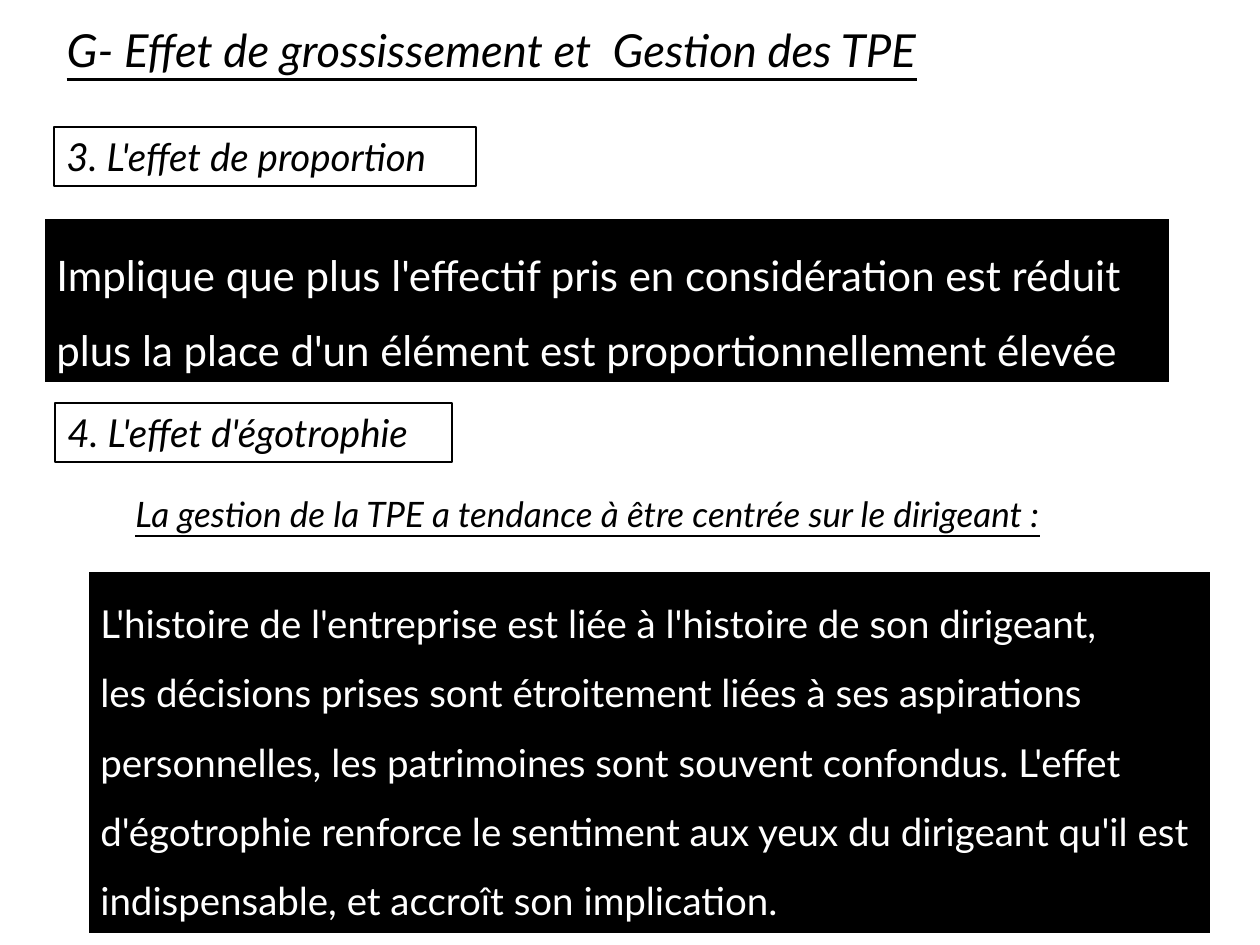
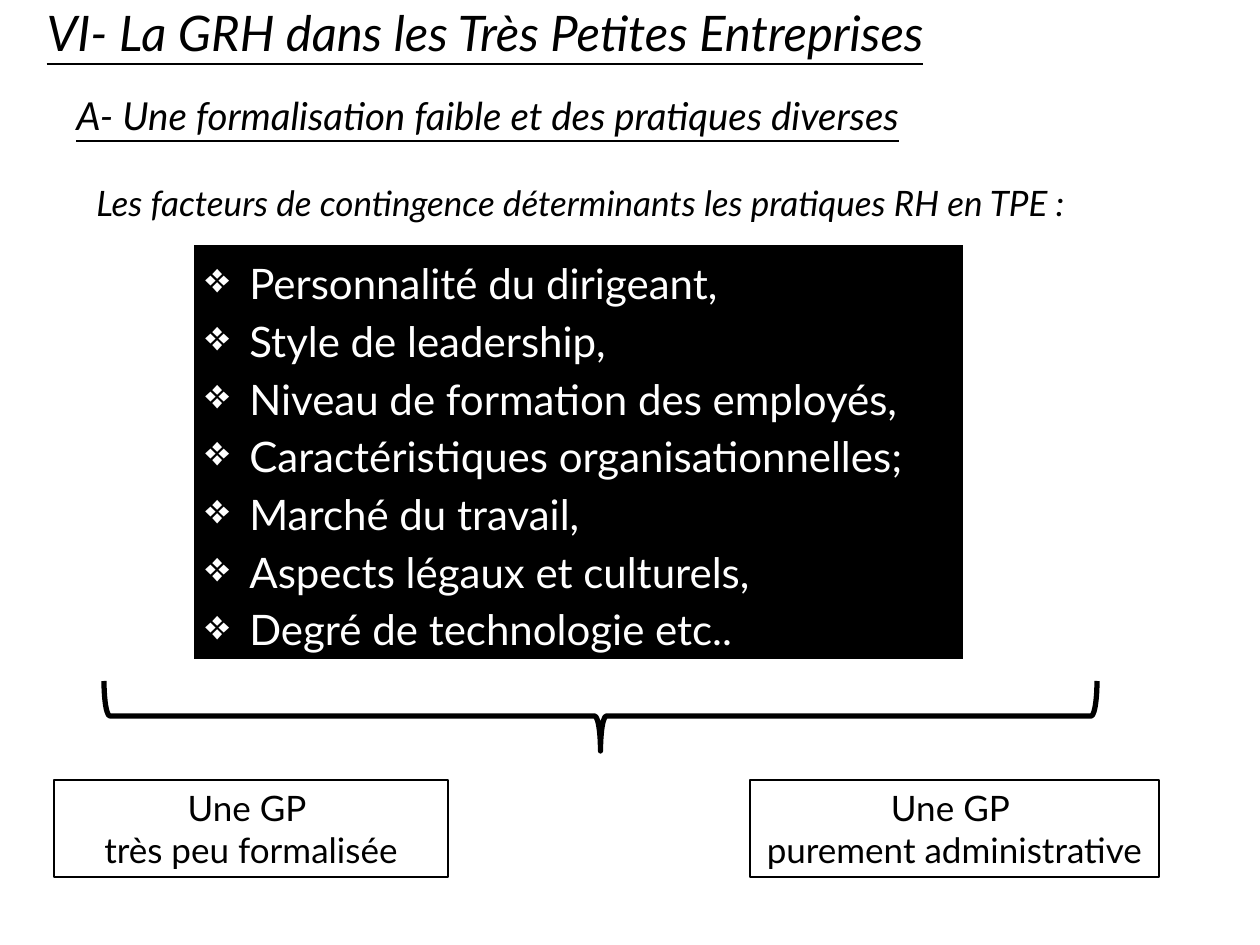
from dataclasses import dataclass

from lxml import etree
from pptx import Presentation
from pptx.dml.color import RGBColor
from pptx.enum.shapes import MSO_SHAPE
from pptx.enum.text import MSO_ANCHOR, MSO_AUTO_SIZE, PP_ALIGN
from pptx.oxml.ns import qn
from pptx.util import Pt

RECTANGLE = MSO_SHAPE.RECTANGLE
RIGHT_BRACE = MSO_SHAPE.RIGHT_BRACE
TOP = MSO_ANCHOR.TOP
GROW = MSO_AUTO_SIZE.SHAPE_TO_FIT_TEXT
LEFT, CENTER = PP_ALIGN.LEFT, PP_ALIGN.CENTER
TITLE_ONLY = 5
PX_PER_INCH = 126


@dataclass(frozen=True)
class Theme:
    font: str = "Lato"
    ink: RGBColor = RGBColor(0, 0, 0)
    paper: RGBColor = RGBColor(255, 255, 255)
    chapter: int = 28
    section: int = 26
    statement: int = 24
    heading: int = 22
    note: int = 20
    thin: float = 0.75
    thick: float = 3


THEME = Theme()


def px(length):
    return round(length * 914400 / PX_PER_INCH)


def place(area):
    return [px(length) for length in area]


# Text shared by every element
def write(box, text, size, color=THEME.ink, italic=False, underline=False,
          align=LEFT, spacing=None):
    frame = box.text_frame
    frame.text = text
    frame.word_wrap = True
    frame.auto_size = GROW
    frame.vertical_anchor = TOP
    for para in frame.paragraphs:
        para.alignment = align
        para.line_spacing = spacing
        for span in para.runs:
            font = span.font
            font.name = THEME.font
            font.size = Pt(size)
            font.color.rgb = color
            font.italic = italic
            font.underline = underline


def add_page(deck, title, area, size):
    page = deck.slides.add_slide(deck.slide_layouts[TITLE_ONLY])
    box = page.shapes.title
    box.left, box.top, box.width, box.height = place(area)
    write(box, title, size, italic=True, underline=True)
    return page


def add_caption(page, area, text, size, underline=True):
    box = page.shapes.add_textbox(*place(area))
    write(box, text, size, italic=True, underline=underline)


def add_rectangle(page, area, fill, line):
    box = page.shapes.add_shape(RECTANGLE, *place(area))
    box.shadow.inherit = False
    box.fill.solid()
    box.fill.fore_color.rgb = fill
    box.line.color.rgb = line
    box.line.width = Pt(THEME.thin)
    return box


def add_label(page, area, text, size, italic=True, align=LEFT):
    box = add_rectangle(page, area, THEME.paper, THEME.ink)
    write(box, text, size, italic=italic, align=align)


def add_panel(page, area, text, size, spacing=1.5):
    box = add_rectangle(page, area, THEME.ink, THEME.paper)
    write(box, text, size, THEME.paper, spacing=spacing)
    return box


def add_bullets(box, symbol, indent):
    for para in box.text_frame.paragraphs:
        properties = para._p.get_or_add_pPr()
        properties.set("marL", str(px(indent)))
        properties.set("indent", str(-px(indent)))
        bullet = etree.SubElement(properties, qn("a:buChar"))
        bullet.set("char", symbol)


def add_brace_below(page, left, top, width, height):
    """Turn a right brace so that it spans the width and points down."""
    shift = (width - height) / 2
    area = (left + shift, top - shift, height, width)
    brace = page.shapes.add_shape(RIGHT_BRACE, *place(area))
    brace.rotation = 90
    brace.shadow.inherit = False
    brace.fill.background()
    brace.line.color.rgb = THEME.ink
    brace.line.width = Pt(THEME.thick)


def build_effects(deck):
    page = add_page(deck, "G- Effet de grossissement et  Gestion des TPE",
                    (54, 16, 963, 68), THEME.section)

    # Proportion effect
    add_label(page, (54, 127, 422, 59), "3. L'effet de proportion", THEME.heading)
    add_panel(page, (44, 218, 1126, 165),
              "Implique que plus l'effectif pris en considération est réduit "
              "plus la place d'un élément est proportionnellement élevée",
              THEME.statement)

    # Egotrophy effect
    add_label(page, (55, 403, 397, 59), "4. L'effet d'égotrophie", THEME.heading)
    add_panel(page, (88, 571, 1123, 363),
              "L'histoire de l'entreprise est liée à l'histoire de son dirigeant,\n"
              "les décisions prises sont étroitement liées à ses aspirations "
              "personnelles, les patrimoines sont souvent confondus. L'effet "
              "d'égotrophie renforce le sentiment aux yeux du dirigeant qu'il est "
              "indispensable, et accroît son implication.",
              THEME.heading)
    add_caption(page, (123, 486, 1052, 55),
                "La gestion de la TPE a tendance à être centrée sur le dirigeant :",
                THEME.note)


def build_practices(deck):
    page = add_page(deck, "VI- La GRH dans les Très Petites Entreprises",
                    (34, -4, 994, 72), THEME.chapter)
    add_caption(page, (64, 86, 973, 59),
                "A- Une formalisation faible et des pratiques diverses", THEME.heading)
    add_caption(page, (84, 175, 1089, 55),
                "Les facteurs de contingence déterminants les pratiques RH en TPE :",
                THEME.note, underline=False)

    # Contingency factors
    factors = [
        "Personnalité du dirigeant,",
        "Style de leadership,",
        "Niveau de formation des employés,",
        "Caractéristiques organisationnelles;",
        "Marché du travail,",
        "Aspects légaux et culturels,",
        "Degré de technologie etc..",
    ]
    panel = add_panel(page, (193, 244, 771, 416), "\n".join(factors),
                      THEME.statement, spacing=Pt(33))
    add_bullets(panel, "❖", 44)

    # Resulting management styles
    add_brace_below(page, 104, 681, 993, 70)
    for left, width, style in ((54, 394, "très peu formalisée"),
                               (750, 409, "purement administrative")):
        add_label(page, (left, 780, width, 97), f"Une GP \n{style}",
                  THEME.note, italic=False, align=CENTER)


def main():
    deck = Presentation()
    deck.slide_width, deck.slide_height = px(1260), px(945)
    build_effects(deck)
    build_practices(deck)
    deck.save("out.pptx")


if __name__ == "__main__":
    main()
